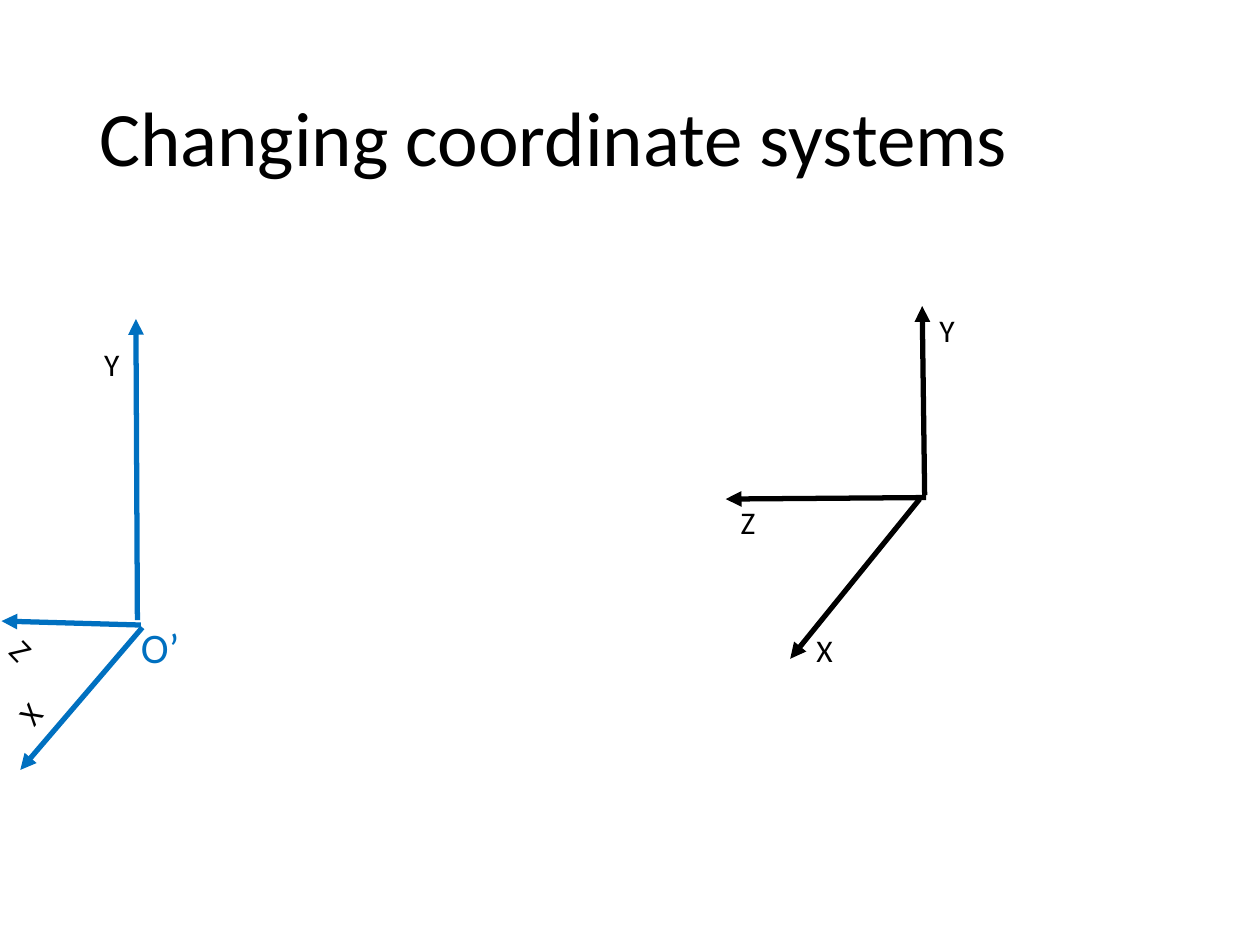
from lxml.etree import SubElement
from pptx import Presentation
from pptx.dml.color import RGBColor
from pptx.enum.shapes import MSO_CONNECTOR
from pptx.enum.text import MSO_ANCHOR
from pptx.oxml.ns import qn
from pptx.util import Cm, Pt

COLORS = {"text": "000000", "world": "000000", "local": "0070C0"}
FONT = "Calibri"

# All lengths in cm, relative to the box of the coordinate system.
# Axis: start, end. Label: text, box, rotation, size, colour.
LOCAL_AXES = [
    ((2.87, 6.22), (0.41, 9.09)),
    ((2.77, 6.07), (2.74, 0)),
    ((2.84, 6.17), (0.03, 6.09)),
]
LOCAL_LABELS = [
    ("X", (-0.23, 7.74, 1.42, 1.02), 130.1, 18, "text"),
    ("Y", (1.85, 0.4, 1.55, 1.02), 0, 18, "text"),
    ("Z", (-0.08, 6.45, 1.55, 1.02), 46.4, 18, "text"),
    ("O’", (2.59, 5.97, 1.45, 1.27), 0, 24, "local"),
]
WORLD_AXES = [
    ((4.04, 3.86), (0, 3.89)),
    ((4.01, 3.81), (3.96, 0)),
    ((3.91, 3.89), (1.3, 7.11)),
]
WORLD_LABELS = [
    ("Y", (4.06, -0.02, 1.5, 1.02), 0, 18, "text"),
    ("X", (1.58, 6.43, 1.17, 0.58), 0, 18, "text"),
    ("Z", (0.05, 3.84, 1.17, 0.58), 0, 18, "text"),
]


def add_text(shapes, text, box, size, color="text", anchor=MSO_ANCHOR.TOP):
    sp = shapes.add_textbox(*(Cm(v) for v in box))
    tf = sp.text_frame
    tf.word_wrap = True
    tf.vertical_anchor = anchor
    tf.text = text
    font = tf.paragraphs[0].runs[0].font
    font.name = FONT
    font.size = Pt(size)
    font.color.rgb = RGBColor.from_string(COLORS[color])
    return sp


def add_arrow(shapes, start, end, color):
    line = shapes.add_connector(MSO_CONNECTOR.STRAIGHT, *(Cm(v) for v in (*start, *end)))
    line.line.color.rgb = RGBColor.from_string(COLORS[color])
    line.line.width = Pt(3)
    SubElement(line.line._get_or_add_ln(), qn("a:tailEnd"), type="triangle")
    SubElement(line._element.spPr, qn("a:effectLst"))


def add_title(slide, text, left, top, width, height):
    sp = add_text(slide.shapes, text, (left, top, width, height), 44,
                  anchor=MSO_ANCHOR.MIDDLE)
    sp.text_frame.paragraphs[0].line_spacing = 0.9


def add_coordinate_system(slide, left, top, axes, labels, color):
    """Group the arrows and labels of one system, placed from its top-left corner."""
    shapes = slide.shapes.add_group_shape().shapes
    for start, end in axes:
        add_arrow(shapes, (left + start[0], top + start[1]),
                  (left + end[0], top + end[1]), color)
    for text, (x, y, width, height), rotation, size, text_color in labels:
        sp = add_text(shapes, text, (left + x, top + y, width, height), size, text_color)
        sp.rotation = rotation


def main():
    prs = Presentation()
    prs.slide_width, prs.slide_height = Cm(25.4), Cm(19.05)
    slide = prs.slides.add_slide(prs.slide_layouts[6])
    add_title(slide, "Changing coordinate systems", 1.75, 1.02, 21.9, 3.68)
    add_coordinate_system(slide, 0, 6.43, LOCAL_AXES, LOCAL_LABELS, "local")
    add_coordinate_system(slide, 14.63, 6.17, WORLD_AXES, WORLD_LABELS, "world")
    prs.save("out.pptx")


if __name__ == "__main__":
    main()
